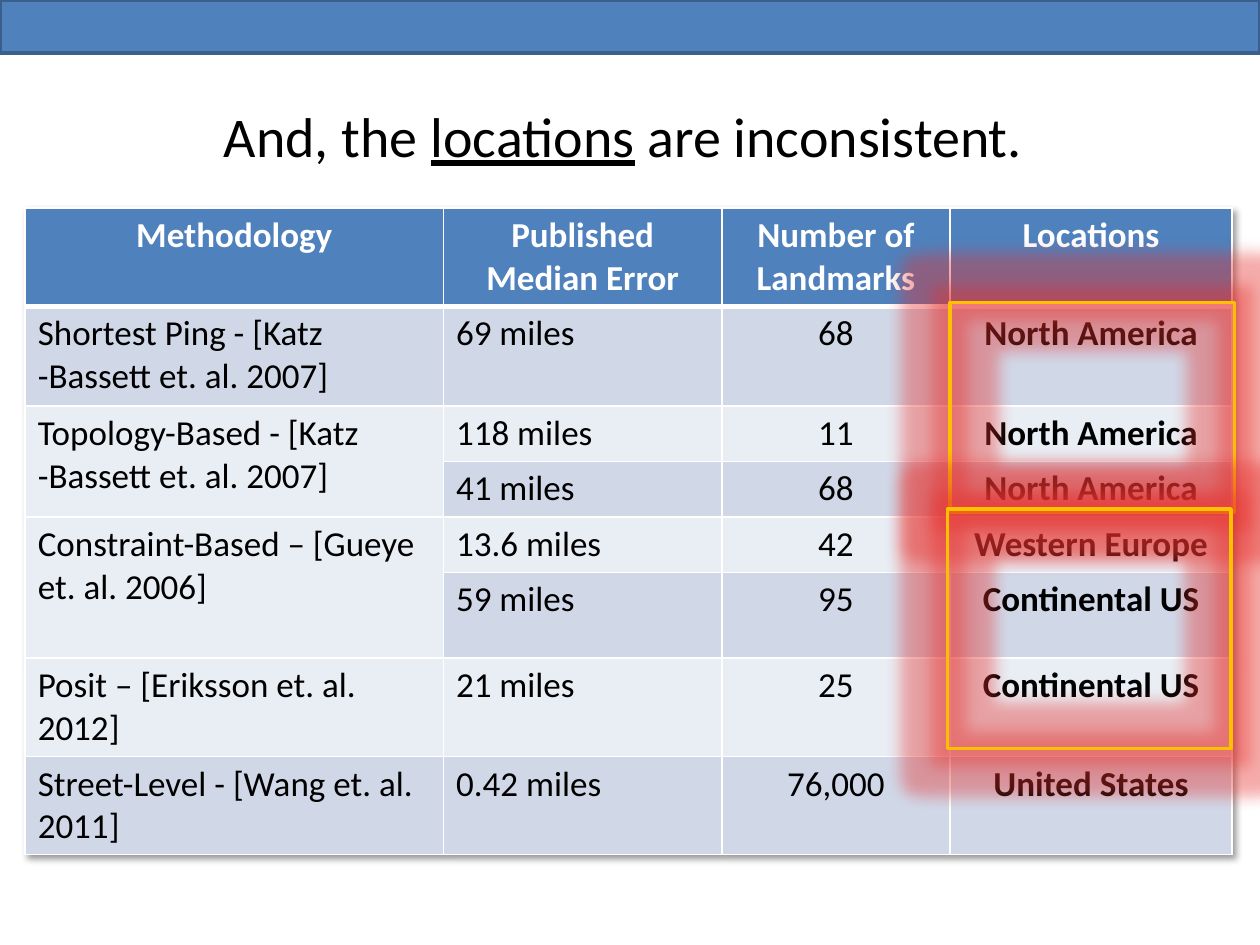
import pptx
import pptx.dml.color
import pptx.enum.shapes
import pptx.enum.text
import pptx.oxml
import pptx.oxml.ns
import pptx.util

RGBColor = pptx.dml.color.RGBColor
Inches = pptx.util.Inches
Pt = pptx.util.Pt
PP_ALIGN = pptx.enum.text.PP_ALIGN
RECTANGLE = pptx.enum.shapes.MSO_SHAPE.RECTANGLE

BLUE = RGBColor(0x4F, 0x81, 0xBD)
DARK_BLUE = RGBColor(0x3A, 0x5F, 0x8C)
BAND_DARK = RGBColor(0xD0, 0xD8, 0xE8)
BAND_LIGHT = RGBColor(0xE9, 0xED, 0xF4)
GOLD = RGBColor(0xFF, 0xC0, 0x00)
GLOW_RED = RGBColor(0xE6, 0x30, 0x2C)
WHITE = RGBColor(0xFF, 0xFF, 0xFF)
BLACK = RGBColor(0, 0, 0)

FONT = "Calibri"
COLUMN_WIDTHS = (3.32, 2.21, 1.81, 2.24)
ROW_HEIGHTS = (0.77, 0.79, 0.44, 0.44, 0.44, 0.68, 0.78, 0.78)
METHODS = (
    ("Methodology", "Published Median Error", "Number of Landmarks", "Locations"),
    ("Shortest Ping - [Katz -Bassett et. al. 2007]", "69 miles", "68", "North America"),
    ("Topology-Based - [Katz -Bassett et. al. 2007]", "118 miles", "11", "North America"),
    ("", "41 miles", "68", "North America"),
    ("Constraint-Based – [Gueye et. al. 2006]", "13.6 miles", "42", "Western Europe"),
    ("", "59 miles", "95", "Continental US"),
    ("Posit – [Eriksson et. al. 2012]", "21 miles", "25", "Continental US"),
    ("Street-Level - [Wang et. al. 2011]", "0.42 miles", "76,000", "United States"),
)


def effect_list(content):
    return pptx.oxml.parse_xml(
        f"<a:effectLst {pptx.oxml.ns.nsdecls('a')}>{content}</a:effectLst>")


def add_rectangle(slide, left, top, width, height, line_color):
    rectangle = slide.shapes.add_shape(
        RECTANGLE, Inches(left), Inches(top), Inches(width), Inches(height))
    rectangle.line.color.rgb = line_color
    rectangle.line.width = Pt(2)
    return rectangle


def add_header_bar(slide):
    bar = add_rectangle(slide, 0, 0, 10, 0.42, DARK_BLUE)
    bar.shadow.inherit = False
    bar.fill.solid()
    bar.fill.fore_color.rgb = BLUE


def add_highlight(slide, left, top, width, height):
    highlight = add_rectangle(slide, left, top, width, height, GOLD)
    highlight.fill.background()
    highlight._element.spPr.append(effect_list(
        f'<a:glow rad="{Pt(18)}"><a:srgbClr val="{GLOW_RED}">'
        '<a:alpha val="40000"/></a:srgbClr></a:glow>'))


def write_title(slide):
    title = slide.shapes.title
    title.left, title.top = Inches(0.45), Inches(0.45)
    title.width, title.height = Inches(8.99), Inches(1.24)
    title.text_frame.vertical_anchor = pptx.enum.text.MSO_ANCHOR.MIDDLE
    sentence = title.text_frame.paragraphs[0]
    sentence.alignment = PP_ALIGN.CENTER
    sentence.font.size = Pt(32)
    sentence.font.name = FONT
    sentence.font.color.rgb = BLACK
    for words in ("And, the ", "locations", " are inconsistent."):
        run = sentence.add_run()
        run.text = words
        if words == "locations":
            run.font.underline = True


def add_borders(cell, is_header):
    properties = cell._tc.get_or_add_tcPr()
    for side in "LRTB":
        width = Pt(3) if is_header and side == "B" else Pt(1)
        properties.append(pptx.oxml.parse_xml(
            f'<a:ln{side} {pptx.oxml.ns.nsdecls("a")} w="{width}"><a:solidFill>'
            f'<a:srgbClr val="{WHITE}"/></a:solidFill></a:ln{side}>'))


def format_cell(cell, text, row, column):
    is_header = row == 0
    add_borders(cell, is_header)
    cell.fill.solid()
    band = BAND_DARK if row % 2 else BAND_LIGHT
    cell.fill.fore_color.rgb = BLUE if is_header else band
    cell.text = text
    paragraph = cell.text_frame.paragraphs[0]
    centred = is_header or column >= 2
    paragraph.alignment = PP_ALIGN.CENTER if centred else PP_ALIGN.LEFT
    paragraph.font.name = FONT
    paragraph.font.size = Pt(20)
    paragraph.font.bold = is_header or column == 3
    paragraph.font.color.rgb = WHITE if is_header else BLACK


def add_methods_table(slide):
    frame = slide.shapes.add_table(
        len(METHODS), len(COLUMN_WIDTHS), Inches(0.2), Inches(1.65),
        Inches(sum(COLUMN_WIDTHS)), Inches(sum(ROW_HEIGHTS)))
    table = frame.table
    for column, width in zip(table.columns, COLUMN_WIDTHS):
        column.width = Inches(width)
    for row, height in zip(table.rows, ROW_HEIGHTS):
        row.height = Inches(height)
    for row, method in enumerate(METHODS):
        for column, text in enumerate(method):
            format_cell(table.cell(row, column), text, row, column)
    for row in (2, 4):
        table.cell(row, 0).merge(table.cell(row + 1, 0))
    table._tbl.tblPr.insert(0, effect_list(
        f'<a:outerShdw blurRad="{Pt(4)}" dist="{Pt(3)}" dir="2700000" algn="tl">'
        f'<a:srgbClr val="{BLACK}"><a:alpha val="40000"/></a:srgbClr></a:outerShdw>'))


def main():
    presentation = pptx.Presentation()
    presentation.slide_width = Inches(10)
    presentation.slide_height = Inches(7.5)
    slide = presentation.slides.add_slide(presentation.slide_layouts[5])
    add_header_bar(slide)
    add_methods_table(slide)
    write_title(slide)
    add_highlight(slide, 7.54, 2.4, 2.26, 1.67)
    add_highlight(slide, 7.52, 4.04, 2.25, 1.9)
    presentation.save("out.pptx")


if __name__ == "__main__":
    main()
